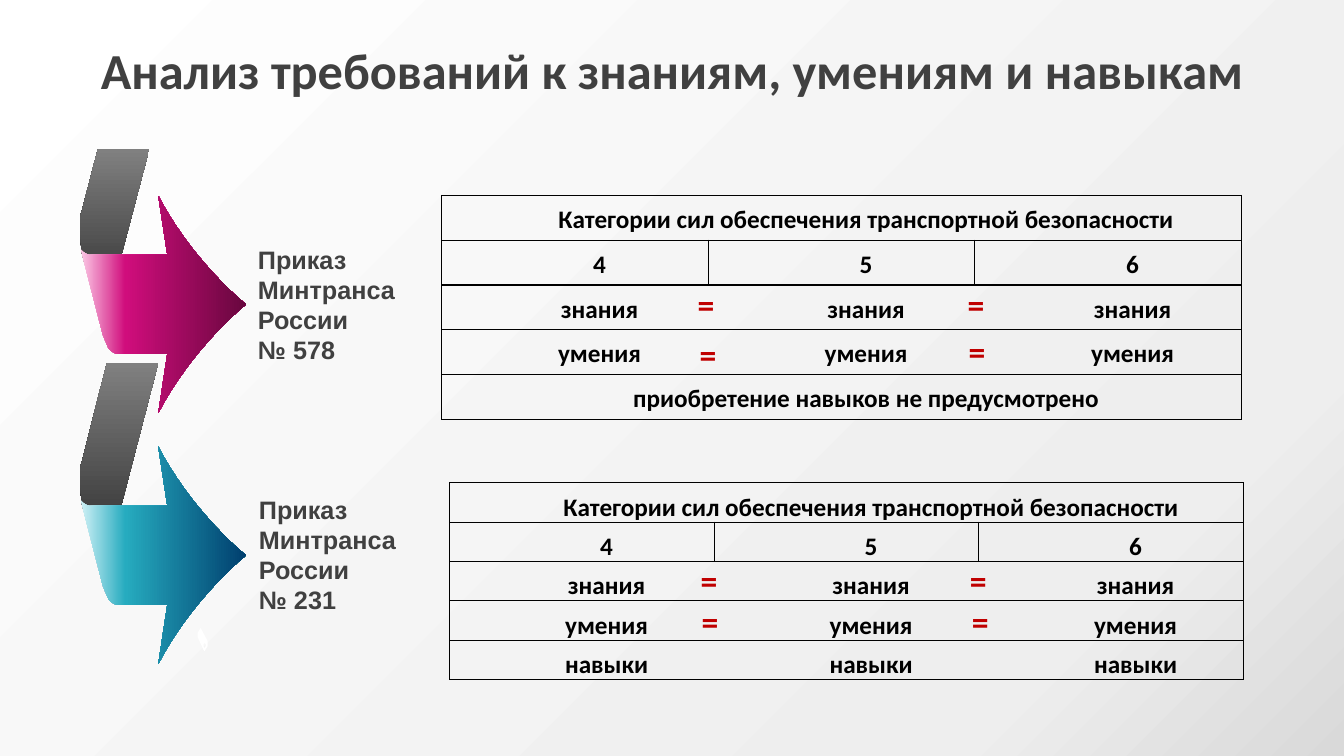
"""Builds a slide comparing knowledge and skill requirements of two orders."""
from dataclasses import dataclass

import lxml.etree
import pptx
import pptx.dml.color
import pptx.enum.text
import pptx.oxml.ns
import pptx.util

Inches = pptx.util.Inches
Pt = pptx.util.Pt
qn = pptx.oxml.ns.qn
Point = tuple[float, float]
Stops = tuple[tuple[int, str], ...]


@dataclass(frozen=True)
class Theme:
    heading_font: str = "Calibri"
    label_font: str = "Arial"
    title_size: int = 36
    text_size: int = 18
    sign_size: int = 24
    dark: str = "404040"
    black: str = "000000"
    red: str = "C00000"
    white: str = "FFFFFF"
    background: Stops = ((0, "FFFFFF"), (81, "EEEEEE"), (100, "D9D9D9"))
    ribbon: Stops = ((0, "000000"), (31, "404040"), (100, "808080"))
    pink: Stops = ((0, "FCC9E6"), (27, "D00D7C"), (100, "68073E"))
    blue: Stops = ((0, "D0F1F6"), (27, "26ABBF"), (100, "003F6E"))


@dataclass(frozen=True)
class Order:
    label: str
    label_at: tuple[float, float, float]
    arrow_top: float
    arrow_fill: Stops
    ribbon_top: float
    ribbon_left: float
    ribbon_right: float
    table_at: Point
    table_width: float
    row_height: float
    last_row: tuple[str, ...]
    signs: tuple[Point, ...]


THEME = Theme()
HEAD_ROWS = (
    ("Категории сил обеспечения транспортной безопасности",),
    ("4", "5", "6"),
    ("знания",) * 3,
    ("умения",) * 3,
)
ORDERS = (
    Order("Приказ Минтранса России\v№ 578", (2.46, 2.37, 1.69), 1.94, THEME.pink,
          1.48, 0.97, 1.48, (4.38, 1.94), 7.93, 0.444,
          ("приобретение навыков не предусмотрено",),
          ((6.82, 2.77), (9.5, 2.77), (6.84, 3.26), (9.51, 3.23))),
    Order("Приказ Минтранса России\v№ 231", (2.47, 4.85, 1.66), 4.43, THEME.blue,
          3.6, 1.06, 1.57, (4.46, 4.79), 7.87, 0.39,
          ("навыки",) * 3,
          ((6.85, 5.51), (9.52, 5.51), (6.86, 5.91), (9.54, 5.91))),
)
RING = (
    ((1.99, 6.23), (2.06, 6.36), (2.06, 6.41), (2.03, 6.46),
     (2.02, 6.45), (1.96, 6.32), (1.96, 6.28)),
    ((2.03, 6.38), (2.02, 6.39), (2.02, 6.42), (2.03, 6.43), (2.04, 6.41), (2.04, 6.39)),
)


def rgb(value: str) -> pptx.dml.color.RGBColor:
    return pptx.dml.color.RGBColor.from_string(value)


def set_font(p, name: str, size: int, color: str) -> None:
    p.font.name = name
    p.font.size = Pt(size)
    p.font.bold = True
    p.font.color.rgb = rgb(color)


def set_gradient(fill, element, stops: Stops, angle: int) -> None:
    fill.gradient()
    grad = element.xpath(".//a:gradFill")[0]
    gs_list = grad.find(qn("a:gsLst"))
    for gs in list(gs_list):
        gs_list.remove(gs)
    for position, color in stops:
        gs = lxml.etree.SubElement(gs_list, qn("a:gs"), pos=str(position * 1000))
        lxml.etree.SubElement(gs, qn("a:srgbClr"), val=color)
    grad.find(qn("a:lin")).set("ang", str(angle * 60000))


def curve(a: Point, b: Point, c: Point, d: Point, steps: int = 12) -> list[Point]:
    points = []
    for i in range(steps + 1):
        t = i / steps
        weights = ((1 - t) ** 3, 3 * t * (1 - t) ** 2, 3 * t * t * (1 - t), t ** 3)
        points.append(tuple(sum(w * q[k] for w, q in zip(weights, (a, b, c, d)))
                            for k in (0, 1)))
    return points


def add_outline(shapes, *contours):
    (x, y), *_ = contours[0]
    builder = shapes.build_freeform(Inches(x), Inches(y), scale=1.0)
    for i, contour in enumerate(contours):
        points = [(Inches(px), Inches(py)) for px, py in contour]
        if i:
            builder.move_to(*points[0])
        builder.add_line_segments(points[1:], close=True)
    sp = builder.convert_to_shape()
    sp.shadow.inherit = False
    sp.line.fill.background()
    return sp


def add_ribbon(shapes, order: Order) -> None:
    y = order.arrow_top
    sp = add_outline(shapes, [
        (order.ribbon_left, order.ribbon_top),
        *curve((0.81, y + 0.16), (0.79, y + 0.21), (0.79, y + 0.28), (0.79, y + 0.35)),
        (0.81, y + 0.56), (1.01, y + 1.33), (order.ribbon_right, order.ribbon_top)])
    set_gradient(sp.fill, sp.element, THEME.ribbon, 270)


def add_arrow(shapes, order: Order) -> None:
    y = order.arrow_top
    tip = (2.44, y + 1.08)
    sp = add_outline(shapes, [
        (1.57, y + 2.16), (1.66, y + 1.57), (1.17, y + 1.57),
        *curve((1.17, y + 1.57), (1.14, y + 1.57), (1.11, y + 1.55), (1.08, y + 1.52)),
        *curve((1.08, y + 1.52), (1.06, y + 1.48), (1.04, y + 1.43), (1.02, y + 1.38)),
        *curve((0.8, y + 0.53), (0.8, y + 0.53), (0.84, y + 0.59), (0.9, y + 0.59)),
        (1.66, y + 0.59),
        *curve((1.57, y), (1.79, y + 0.43), (2.15, y + 0.84), tip),
        *curve(tip, (2.15, y + 1.32), (1.79, y + 1.73), (1.57, y + 2.16))])
    set_gradient(sp.fill, sp.element, order.arrow_fill, 0)


def add_text(shapes, text: str, box: tuple[float, ...], font: str, size: int,
             color: str, wrap: bool) -> None:
    tf = shapes.add_textbox(*map(Inches, box)).text_frame
    tf.word_wrap = wrap
    tf.auto_size = pptx.enum.text.MSO_AUTO_SIZE.SHAPE_TO_FIT_TEXT
    tf.text = text
    set_font(tf.paragraphs[0], font, size, color)


def set_borders(cell, sides: str) -> None:
    tc_pr = cell._tc.get_or_add_tcPr()
    for side in "LRTB":
        ln = lxml.etree.SubElement(tc_pr, qn(f"a:ln{side}"), w=str(Pt(1)))
        if side in sides:
            fill = lxml.etree.SubElement(ln, qn("a:solidFill"))
            lxml.etree.SubElement(fill, qn("a:srgbClr"), val=THEME.black)
        else:
            lxml.etree.SubElement(ln, qn("a:noFill"))


def add_requirements(shapes, order: Order) -> None:
    rows = (*HEAD_ROWS, order.last_row)
    size = (order.table_width, order.row_height * len(rows))
    table = shapes.add_table(len(rows), 3, *map(Inches, (*order.table_at, *size))).table
    table.first_row = table.horz_banding = False
    for i, row in enumerate(rows):
        if len(row) == 1:
            table.cell(i, 0).merge(table.cell(i, 2))
        for j in range(3):
            cell = table.cell(i, j)
            open_row = i > 1 and len(row) == 3
            sides = "TB" + "L" * (j == 0 or not open_row) + "R" * (j == 2 or not open_row)
            set_borders(cell, sides)
            cell.fill.background()
            cell.margin_left = cell.margin_right = Inches(0.07)
            cell.margin_top = cell.margin_bottom = 0
            p = cell.text_frame.paragraphs[0]
            if j < len(row):
                p.text = row[j]
            p.alignment = pptx.enum.text.PP_ALIGN.CENTER
            p.line_spacing = 1.3
            p._p.get_or_add_pPr().set("indent", str(Inches(0.49)))
            set_font(p, THEME.heading_font, THEME.text_size, THEME.black)


def add_title(s) -> None:
    title = s.shapes.title
    title.left, title.top, title.width, title.height = map(Inches, (0.67, 0.3, 12, 0.78))
    tf = title.text_frame
    tf.margin_left = tf.margin_right = 0
    tf.margin_top = tf.margin_bottom = Inches(0.07)
    tf.vertical_anchor = pptx.enum.text.MSO_ANCHOR.MIDDLE
    tf.auto_size = pptx.enum.text.MSO_AUTO_SIZE.NONE
    tf.text = "Анализ требований к знаниям, умениям и навыкам"
    tf.paragraphs[0].alignment = pptx.enum.text.PP_ALIGN.CENTER
    set_font(tf.paragraphs[0], THEME.heading_font, THEME.title_size, THEME.dark)


def main() -> None:
    prs = pptx.Presentation()
    prs.slide_width, prs.slide_height = Inches(13.33), Inches(7.5)
    s = prs.slides.add_slide(prs.slide_layouts[5])
    set_gradient(s.background.fill, s.element, THEME.background, 45)
    add_title(s)
    for order in reversed(ORDERS):
        add_ribbon(s.shapes, order)
        add_arrow(s.shapes, order)
    ring = add_outline(s.shapes, *RING)
    ring.fill.solid()
    ring.fill.fore_color.rgb = rgb(THEME.white)
    for order in ORDERS:
        add_text(s.shapes, order.label, (*order.label_at, 1.31), THEME.label_font,
                 THEME.text_size, THEME.dark, True)
        add_requirements(s.shapes, order)
        for sign in order.signs:
            add_text(s.shapes, "=", (*sign, 0.37, 0.5), THEME.heading_font,
                     THEME.sign_size, THEME.red, False)
    prs.save("out.pptx")


if __name__ == "__main__":
    main()
